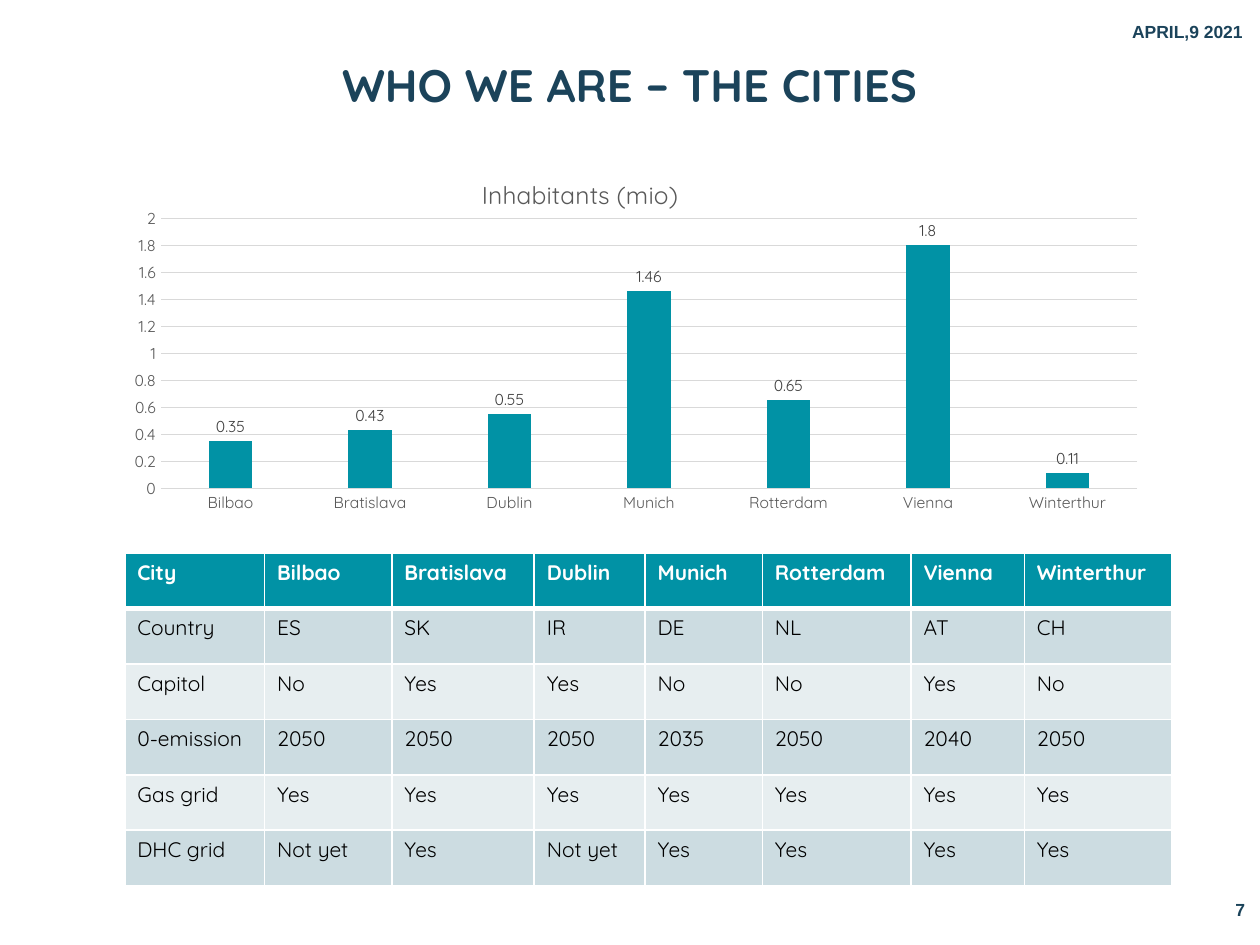
from lxml import etree
from pptx import Presentation
from pptx import util as u
from pptx.chart.data import CategoryChartData
from pptx.dml.color import RGBColor
from pptx.enum import chart as ch, text
from pptx.oxml.ns import qn

NAVY = RGBColor(0x1B, 0x43, 0x5A)
TEAL = RGBColor(0x01, 0x92, 0xA5)
DARK = RGBColor(0xCC, 0xDC, 0xE1)
PALE = RGBColor(0xE7, 0xEE, 0xF0)
WHITE = RGBColor(0xFF, 0xFF, 0xFF)
BLACK = RGBColor(0, 0, 0)
GRAY = RGBColor(0x59, 0x59, 0x59)
INK = RGBColor(0x40, 0x40, 0x40)
GRID = RGBColor(0xD9, 0xD9, 0xD9)

CITIES = ["Bilbao", "Bratislava", "Dublin", "Munich", "Rotterdam", "Vienna", "Winterthur"]
COUNTS = [0.35, 0.43, 0.55, 1.46, 0.65, 1.8, 0.11]
ROWS = [
    ["City", *CITIES],
    ["Country", "ES", "SK", "IR", "DE", "NL", "AT", "CH"],
    ["Capitol", "No", "Yes", "Yes", "No", "No", "Yes", "No"],
    ["0-emission", "2050", "2050", "2050", "2035", "2050", "2040", "2050"],
    ["Gas grid"] + ["Yes"] * 7,
    ["DHC grid", "Not yet", "Yes", "Not yet", "Yes", "Yes", "Yes", "Yes"],
]
WIDTHS = [1.11, 1.01, 1.13, 0.88, 0.93, 1.18, 0.9, 1.17]
HIGH = 0.44


class Deck:
    face = "Quicksand"

    def __init__(self, wide, high):
        self.prs = Presentation()
        self.prs.slide_width = u.Inches(wide)
        self.prs.slide_height = u.Inches(high)
        self.slide = self.prs.slides.add_slide(self.prs.slide_layouts[6])

    def style(self, font, size, color, bold=False, face=None):
        font.name = face or self.face
        font.size = u.Pt(size)
        font.bold = bold
        font.color.rgb = color

    def label(self, words, box, size, align, face=None):
        frame = self.slide.shapes.add_textbox(*map(u.Inches, box)).text_frame
        frame.word_wrap = True
        frame.vertical_anchor = text.MSO_ANCHOR.MIDDLE
        para = frame.paragraphs[0]
        para.text = words
        para.alignment = align
        self.style(para.font, size, NAVY, True, face)
        return para

    def place(self, node, index, **spots):
        """Give a chart part a manual layout, in fractions of the chart."""
        for old in node.findall(qn("c:layout")):
            node.remove(old)
        layout = etree.Element(qn("c:layout"))
        manual = etree.SubElement(layout, qn("c:manualLayout"))
        for tag, val in spots.items():
            etree.SubElement(manual, qn("c:" + tag)).set("val", str(val))
        node.insert(index, layout)

    def chart(self, name, cats, vals, box):
        data = CategoryChartData()
        data.categories = cats
        data.add_series(name, vals)
        kind = ch.XL_CHART_TYPE.COLUMN_CLUSTERED
        chart = self.slide.shapes.add_chart(kind, *map(u.Inches, box), data).chart
        self.style(chart.font, 10, BLACK)
        chart.has_legend = False

        # Title and plot area
        chart.has_title = True
        title = chart.chart_title
        para = title.text_frame.paragraphs[0]
        para.text = name
        self.style(para.font, 14, GRAY)
        title.include_in_layout = False
        self.place(title._element, 1, xMode="edge", yMode="edge", x=0.36, y=0.01)
        self.place(chart._chartSpace.chart.plotArea, 0, layoutTarget="inner",
                   xMode="edge", yMode="edge", x=0.069, y=0.075, w=0.897, h=0.379)

        # Axes
        for axis in (chart.category_axis, chart.value_axis):
            axis.major_tick_mark = axis.minor_tick_mark = ch.XL_TICK_MARK.NONE
            self.style(axis.tick_labels.font, 9, GRAY)
        up = chart.value_axis
        up.minimum_scale, up.maximum_scale, up.major_unit = 0, 2, 0.2
        up.format.line.fill.background()
        for line in (chart.category_axis.format.line, up.major_gridlines.format.line):
            line.color.rgb = GRID
            line.width = u.Pt(0.75)

        # Bars and their values
        plot = chart.plots[0]
        plot.gap_width, plot.overlap = 219, -27
        plot.vary_by_categories = False
        bars = plot.series[0]
        bars.format.fill.solid()
        bars.format.fill.fore_color.rgb = TEAL
        tags = bars.data_labels
        tags.show_value = True
        tags.position = ch.XL_LABEL_POSITION.OUTSIDE_END
        self.style(tags.font, 9, INK)

    def edge(self, cell, side, width):
        line = etree.SubElement(cell._tc.get_or_add_tcPr(), qn("a:ln" + side))
        line.set("w", str(u.Pt(width)))
        fill = etree.SubElement(line, qn("a:solidFill"))
        etree.SubElement(fill, qn("a:srgbClr")).set("val", str(WHITE))

    def table(self, rows, widths, high, left, top):
        box = (left, top, sum(widths), high * len(rows))
        grid = self.slide.shapes.add_table(
            len(rows), len(widths), *map(u.Inches, box)).table
        for col, width in zip(grid.columns, widths):
            col.width = u.Inches(width)
        for r, words in enumerate(rows):
            grid.rows[r].height = u.Inches(high)
            head = r == 0
            shade = TEAL if head else DARK if r % 2 else PALE
            for c, word in enumerate(words):
                cell = grid.cell(r, c)
                for side in "LRTB":
                    thick = (r, side) in ((0, "B"), (1, "T"))
                    self.edge(cell, side, 3 if thick else 1)
                cell.fill.solid()
                cell.fill.fore_color.rgb = shade
                para = cell.text_frame.paragraphs[0]
                para.text = word
                self.style(para.font, 12, WHITE if head else BLACK, head)


def main():
    deck = Deck(10, 7.5)
    right = text.PP_ALIGN.RIGHT

    # Date, page number and heading
    deck.label("APRIL,9 2021", (7.71, 0.11, 2.25, 0.28), 10, right, "Arial")
    deck.label("7", (7.73, 7.09, 2.25, 0.26), 10, right, "Arial")
    head = deck.label("WHO WE ARE – THE CITIES", (0.69, 0.43, 8.62, 0.54),
                      26, text.PP_ALIGN.CENTER)
    head.line_spacing = 0.9

    # Inhabitants and city facts
    deck.chart("Inhabitants (mio)", CITIES, COUNTS, (0.68, 1.31, 8.64, 5.65))
    deck.table(ROWS, WIDTHS, HIGH, 0.99, 4.39)

    deck.prs.save("out.pptx")


if __name__ == "__main__":
    main()
